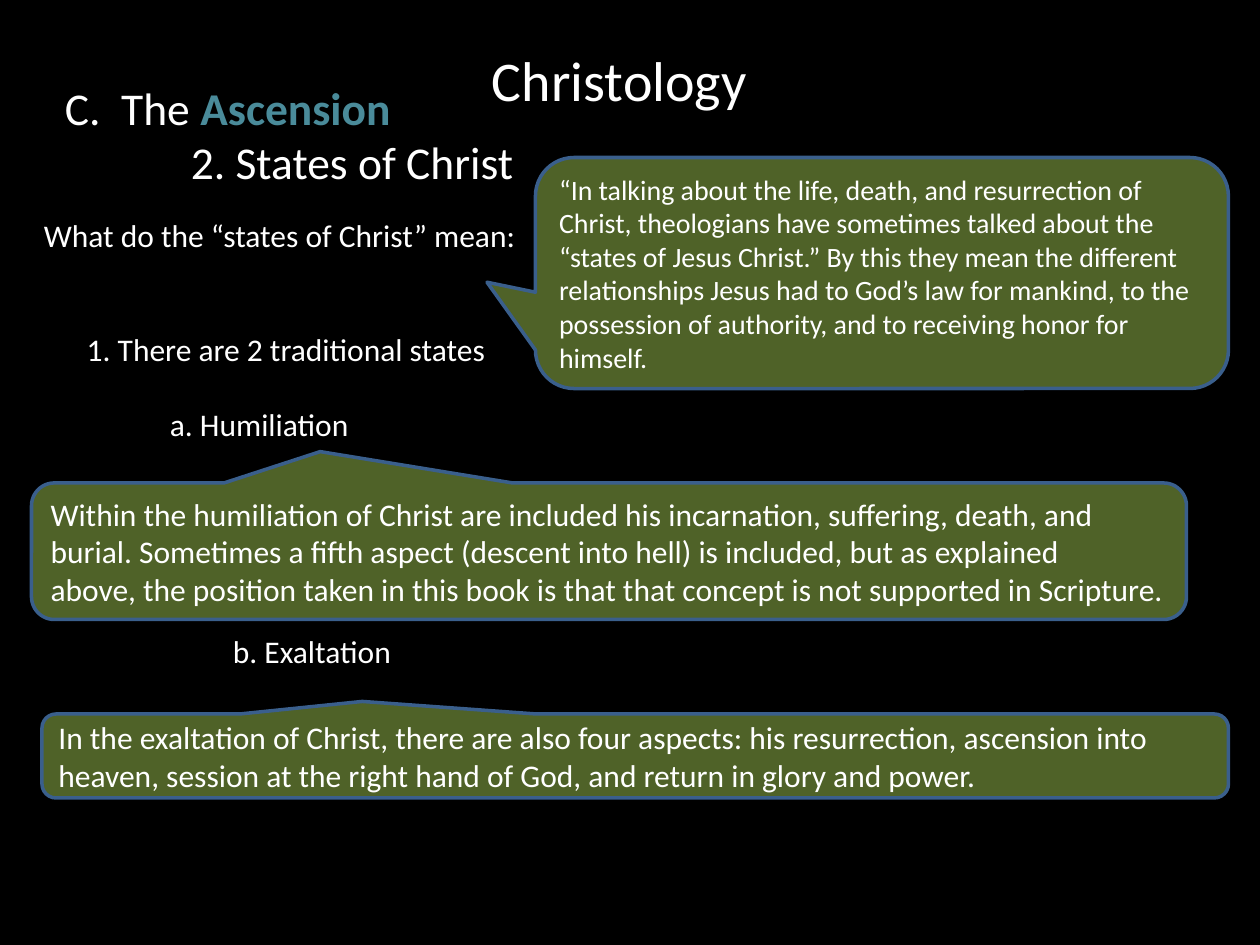
"""Build the Christology slide on the two states of Christ."""
from pptx import Presentation
from pptx.dml.color import RGBColor
from pptx.enum.shapes import MSO_SHAPE
from pptx.enum.text import MSO_ANCHOR, PP_ALIGN
from pptx.util import Pt

WHITE, BLACK, TEAL, OLIVE, BLUE = "FFFFFF", "000000", "4A8B9A", "4F6228", "3A5F8C"


def color(hex_value):
    return RGBColor.from_string(hex_value)


def write(frame, lines, size=18, align=PP_ALIGN.LEFT, anchor=MSO_ANCHOR.TOP):
    """Write lines of (runs, indent, space before), each run a (text, colour, bold)."""
    frame.word_wrap = True
    frame.vertical_anchor = anchor
    for number, (runs, indent, gap) in enumerate(lines):
        paragraph = frame.add_paragraph() if number else frame.paragraphs[0]
        paragraph.alignment = align
        paragraph.space_before = Pt(gap)
        paragraph._p.get_or_add_pPr().set("marL", str(Pt(indent)))
        for text, hex_value, bold in runs:
            run = paragraph.add_run()
            run.text = text
            run.font.name = "Calibri"
            run.font.size = Pt(size)
            run.font.bold = bold
            run.font.color.rgb = color(hex_value)


deck = Presentation()
deck.slide_width, deck.slide_height = Pt(720), Pt(540)
slide = deck.slides.add_slide(deck.slide_layouts[6])
slide.background.fill.solid()
slide.background.fill.fore_color.rgb = color(BLACK)

title = slide.shapes.add_textbox(Pt(48), Pt(0), Pt(612), Pt(90))
write(title.text_frame, [([("Christology", WHITE, False)], 0, 0)],
      size=32, align=PP_ALIGN.CENTER, anchor=MSO_ANCHOR.MIDDLE)

heading = slide.shapes.add_textbox(Pt(30), Pt(42), Pt(654), Pt(70.5))
write(heading.text_frame, [
    ([("C.  The ", WHITE, False), ("Ascension", TEAL, True)], 0, 0),
    ([("2. States of Christ", WHITE, False)], 72, 0),
], size=26)

LINE = 21.6
outline = [
    ("What do the “states of Christ” mean:", 0, 0),
    ("1. There are 2 traditional states", 24.5, 2 * LINE),
    ("a. Humiliation", 72, LINE),
    ("b. Exaltation", 108, 5 * LINE),
]
states = slide.shapes.add_textbox(Pt(18), Pt(120), Pt(612), Pt(291))
write(states.text_frame,
      [([(text, WHITE, False)], indent, gap) for text, indent, gap in outline])

callouts = [
    ((18, 276, 660, 78), (-0.25, -0.73), 18, [
        "Within the humiliation of Christ are included his incarnation, suffering, death, and",
        "burial. Sometimes a fifth aspect (descent into hell) is included, but as explained",
        "above, the position taken in this book is that that concept is not supported in Scripture.",
    ]),
    ((24, 408, 678, 48), (-0.23, -0.65), 18, [
        "In the exaltation of Christ, there are also four aspects: his resurrection, ascension into "
        "heaven, session at the right hand of God, and return in glory and power.",
    ]),
    ((306, 90, 396, 132), (-0.57, 0.04), 16, [
        "“In talking about the life, death, and resurrection of Christ, theologians have sometimes "
        "talked about the “states of Jesus Christ.” By this they mean the different",
        "relationships Jesus had to God’s law for mankind, to the possession of authority, "
        "and to receiving honor for himself.",
    ]),
]
for box, tail, size, quote in callouts:
    callout = slide.shapes.add_shape(MSO_SHAPE.ROUNDED_RECTANGULAR_CALLOUT, *map(Pt, box))
    callout.adjustments[0], callout.adjustments[1] = tail
    callout.shadow.inherit = False
    callout.fill.solid()
    callout.fill.fore_color.rgb = color(OLIVE)
    callout.line.color.rgb = color(BLUE)
    callout.line.width = Pt(2)
    write(callout.text_frame, [([(text, WHITE, False)], 0, 0) for text in quote],
          size=size, anchor=MSO_ANCHOR.MIDDLE)

deck.save("out.pptx")
